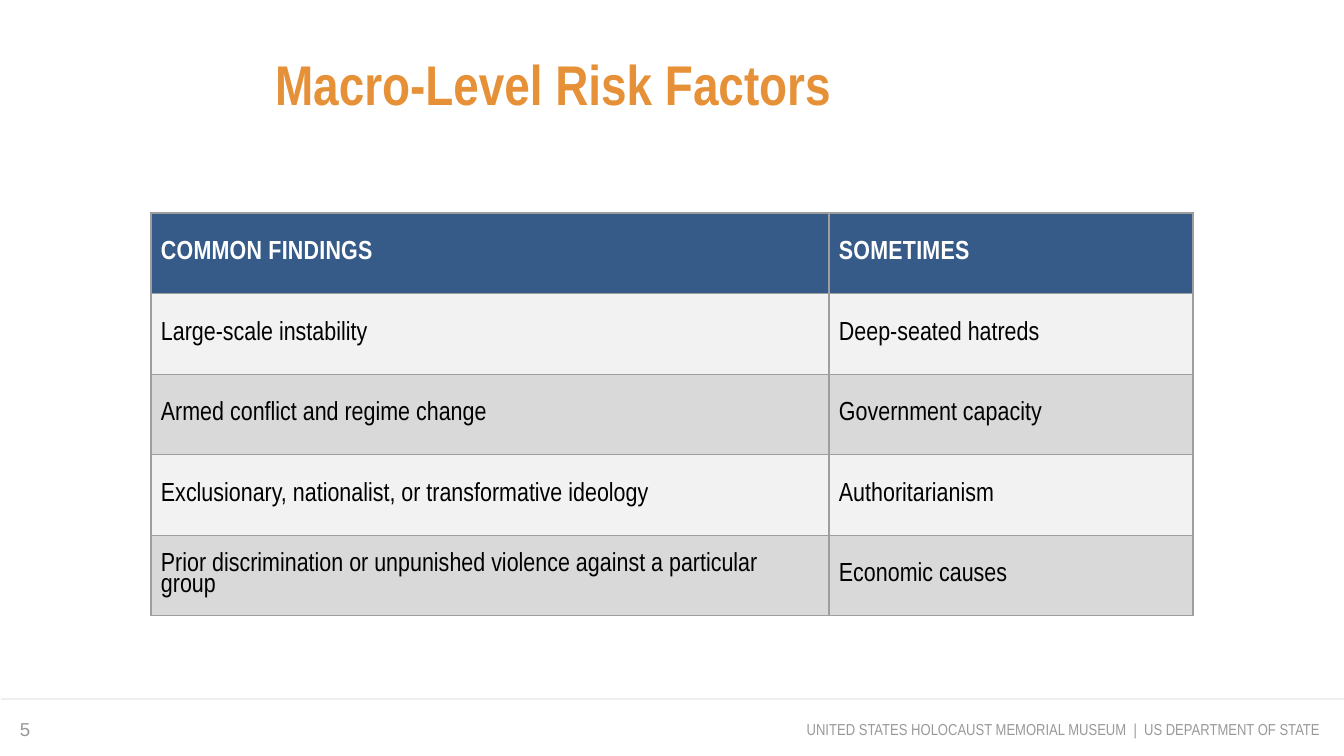
from dataclasses import dataclass

from lxml import etree
from pptx import Presentation
from pptx.dml.color import RGBColor
from pptx.enum.shapes import MSO_CONNECTOR
from pptx.enum.text import MSO_ANCHOR, PP_ALIGN
from pptx.oxml.ns import qn
from pptx.util import Emu, Pt

LEFT, RIGHT = PP_ALIGN.LEFT, PP_ALIGN.RIGHT
MIDDLE, BOTTOM = MSO_ANCHOR.MIDDLE, MSO_ANCHOR.BOTTOM
STRAIGHT = MSO_CONNECTOR.STRAIGHT

TITLE = "Macro-Level Risk Factors"
HEADER = ("COMMON FINDINGS", "SOMETIMES")
FACTORS = [
    ("Large-scale instability", "Deep-seated hatreds"),
    ("Armed conflict and regime change", "Government capacity"),
    ("Exclusionary, nationalist, or transformative ideology", "Authoritarianism"),
    ("Prior discrimination or unpunished violence against a particular group",
     "Economic causes"),
]
FOOTER = "UNITED STATES HOLOCAUST MEMORIAL MUSEUM  |  US DEPARTMENT OF STATE"
PAGE_NUMBER = "5"

# Lengths in px
SLIDE_W, SLIDE_H = 1344, 756
TITLE_BOX, TITLE_INDENT = (83, 47, 1176, 73), 192
TABLE_LEFT, TABLE_TOP, TABLE_H = 151, 213, 403
COL_WIDTHS = (678, 364)
CELL_MARGIN_X, CELL_MARGIN_Y = 10, 8
RULE_Y = 699
FOOTER_BOX = (696, 700, 637, 58)
NUMBER_BOX = (7, 694, 105, 58)
FOOTER_MARGIN = 13


@dataclass(frozen=True)
class Theme:
    narrow: str = "Arial Narrow"
    sans: str = "Arial"
    title: str = "E69138"
    header: str = "375B89"
    header_text: str = "FFFFFF"
    body_text: str = "000000"
    bands: tuple = ("F2F2F2", "D9D9D9")
    border: str = "9E9E9E"
    muted: str = "999999"
    rule: str = "EFEFEF"
    title_size: float = 30
    table_size: float = 14
    footer_size: float = 8.5
    number_size: float = 10


THEME = Theme()


def px(n):
    return Emu(round(n * 914400 / 134.4))


def rgb(color):
    return RGBColor.from_string(color)


def add_run(p, text, size, color, font=THEME.narrow, bold=False):
    r = p.add_run()
    r.text = text
    r.font.size = Pt(size)
    r.font.name = font
    r.font.bold = bold
    r.font.color.rgb = rgb(color)
    return r


def add_label(slide, box, text, size, color, font=THEME.narrow, bold=False,
              align=LEFT, anchor=MIDDLE, margin=0):
    sp = slide.shapes.add_textbox(*map(px, box))
    tf = sp.text_frame
    tf.word_wrap = True
    tf.vertical_anchor = anchor
    tf.margin_left = tf.margin_right = px(margin)
    tf.margin_top = tf.margin_bottom = px(margin)
    p = tf.paragraphs[0]
    p.alignment = align
    add_run(p, text, size, color, font, bold)
    return p


def set_borders(cell, color, width):
    """Put the four edge lines ahead of the cell's fill, as the schema orders."""
    tc_pr = cell._tc.get_or_add_tcPr()
    for i, edge in enumerate(("lnL", "lnR", "lnT", "lnB")):
        ln = etree.Element(qn(f"a:{edge}"), w=str(Pt(width)))
        fill = etree.SubElement(ln, qn("a:solidFill"))
        etree.SubElement(fill, qn("a:srgbClr"), val=color)
        tc_pr.insert(i, ln)


def fill_cell(cell, text, row):
    is_header = row == 0
    cell.fill.solid()
    cell.fill.fore_color.rgb = rgb(
        THEME.header if is_header else THEME.bands[(row - 1) % 2])
    set_borders(cell, THEME.border, 0.75)
    cell.vertical_anchor = MIDDLE
    cell.margin_left = cell.margin_right = px(CELL_MARGIN_X)
    cell.margin_top = cell.margin_bottom = px(CELL_MARGIN_Y)
    p = cell.text_frame.paragraphs[0]
    p.line_spacing = 0.85
    p.space_after = Pt(0 if is_header else 6)
    color = THEME.header_text if is_header else THEME.body_text
    r = add_run(p, text, THEME.table_size, color, bold=is_header)
    if is_header:
        r.font._element.set("spc", "10")


def add_factor_table(slide):
    rows = [HEADER] + FACTORS
    table = slide.shapes.add_table(
        len(rows), len(HEADER), px(TABLE_LEFT), px(TABLE_TOP),
        px(sum(COL_WIDTHS)), px(TABLE_H)).table
    for column, width in zip(table.columns, COL_WIDTHS):
        column.width = px(width)
    for i, texts in enumerate(rows):
        table.rows[i].height = px(TABLE_H / len(rows))
        for j, text in enumerate(texts):
            fill_cell(table.cell(i, j), text, i)


def add_rule(slide):
    line = slide.shapes.add_connector(
        STRAIGHT, px(1), px(RULE_Y), px(SLIDE_W), px(RULE_Y))
    line.line.color.rgb = rgb(THEME.rule)
    line.line.width = Pt(1.5)
    etree.SubElement(line._element.spPr, qn("a:effectLst"))


def main():
    prs = Presentation()
    prs.slide_width, prs.slide_height = px(SLIDE_W), px(SLIDE_H)
    slide = prs.slides.add_slide(prs.slide_layouts[6])

    add_rule(slide)
    add_label(slide, FOOTER_BOX, FOOTER, THEME.footer_size, THEME.muted,
              align=RIGHT, margin=FOOTER_MARGIN)
    title = add_label(slide, TITLE_BOX, TITLE, THEME.title_size, THEME.title,
                      bold=True)
    title._p.get_or_add_pPr().set("marL", str(px(TITLE_INDENT)))
    add_label(slide, NUMBER_BOX, PAGE_NUMBER, THEME.number_size, THEME.muted,
              font=THEME.sans, anchor=BOTTOM, margin=FOOTER_MARGIN)
    add_factor_table(slide)

    prs.save("out.pptx")


if __name__ == "__main__":
    main()
